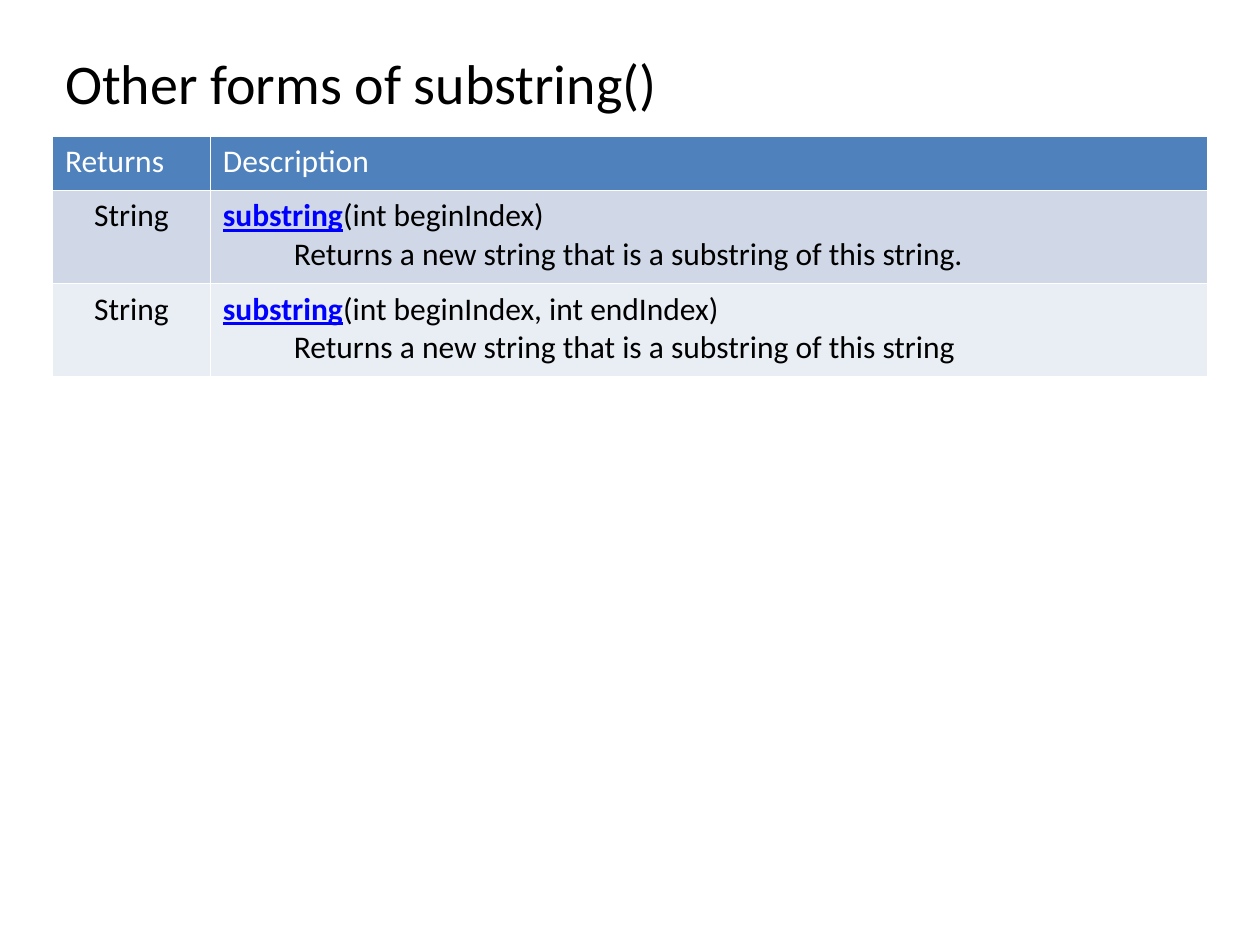
import pptx
import pptx.dml.color
import pptx.enum.text
import pptx.util

Cm = pptx.util.Cm
Pt = pptx.util.Pt
RGBColor = pptx.dml.color.RGBColor
ALIGN = pptx.enum.text.PP_ALIGN

BLACK = RGBColor(0x00, 0x00, 0x00)
WHITE = RGBColor(0xFF, 0xFF, 0xFF)
LINK_BLUE = RGBColor(0x00, 0x00, 0xFF)
HEADER_BLUE = RGBColor(0x4F, 0x81, 0xBD)
BAND_COLORS = [RGBColor(0xD0, 0xD8, 0xE8), RGBColor(0xE9, 0xED, 0xF4)]
FONT = "Calibri"

TITLE = "Other forms of substring()"
HEADERS = ["Returns", "Description"]
METHODS = [
    ("String", "substring", "(int beginIndex)",
     "Returns a new string that is a substring of this string."),
    ("String", "substring", "(int beginIndex, int endIndex)",
     "Returns a new string that is a substring of this string"),
]
COLUMN_WIDTHS = [Cm(3.18), Cm(20.11)]
HEADER_HEIGHT = Cm(1.09)
METHOD_HEIGHT = Cm(1.88)
LEFT = Cm(1.06)
DESCRIPTION_INDENT = Cm(1.43)


def add_run(paragraph, text, color, size=18, bold=False, underline=False):
    run = paragraph.add_run()
    run.text = text
    font = run.font
    font.name, font.size, font.bold = FONT, Pt(size), bold
    font.underline = underline
    font.color.rgb = color


def fill_cell(cell, color):
    cell.fill.solid()
    cell.fill.fore_color.rgb = color


def add_title(slide):
    title = slide.shapes.title
    title.left, title.top, title.width, title.height = LEFT, Cm(0.85), Cm(22.86), Cm(2.1)
    title.text_frame.vertical_anchor = pptx.enum.text.MSO_ANCHOR.TOP
    paragraph = title.text_frame.paragraphs[0]
    paragraph.alignment = ALIGN.LEFT
    paragraph.space_before = Pt(2)
    add_run(paragraph, TITLE, BLACK, size=32)


def add_method_table(slide):
    height = HEADER_HEIGHT + METHOD_HEIGHT * len(METHODS)
    table = slide.shapes.add_table(
        len(METHODS) + 1, len(HEADERS), LEFT, Cm(2.75), sum(COLUMN_WIDTHS), height).table
    for column, width in zip(table.columns, COLUMN_WIDTHS):
        column.width = width
    table.rows[0].height = HEADER_HEIGHT

    for index, header in enumerate(HEADERS):
        cell = table.cell(0, index)
        fill_cell(cell, HEADER_BLUE)
        add_run(cell.text_frame.paragraphs[0], header, WHITE)

    for row, (returns, name, arguments, description) in enumerate(METHODS, start=1):
        table.rows[row].height = METHOD_HEIGHT
        returns_cell, method_cell = table.cell(row, 0), table.cell(row, 1)
        for cell in (returns_cell, method_cell):
            fill_cell(cell, BAND_COLORS[(row - 1) % len(BAND_COLORS)])

        paragraph = returns_cell.text_frame.paragraphs[0]
        paragraph.alignment = ALIGN.CENTER
        add_run(paragraph, returns, BLACK)

        signature = method_cell.text_frame.paragraphs[0]
        add_run(signature, name, LINK_BLUE, bold=True, underline=True)
        add_run(signature, arguments, BLACK)
        detail = method_cell.text_frame.add_paragraph()
        detail._p.get_or_add_pPr().set("marL", str(DESCRIPTION_INDENT))
        add_run(detail, description, BLACK)


def main():
    presentation = pptx.Presentation()
    presentation.slide_width, presentation.slide_height = Cm(25.4), Cm(19.05)
    slide = presentation.slides.add_slide(presentation.slide_layouts[5])
    add_method_table(slide)
    add_title(slide)
    presentation.save("out.pptx")


if __name__ == "__main__":
    main()
